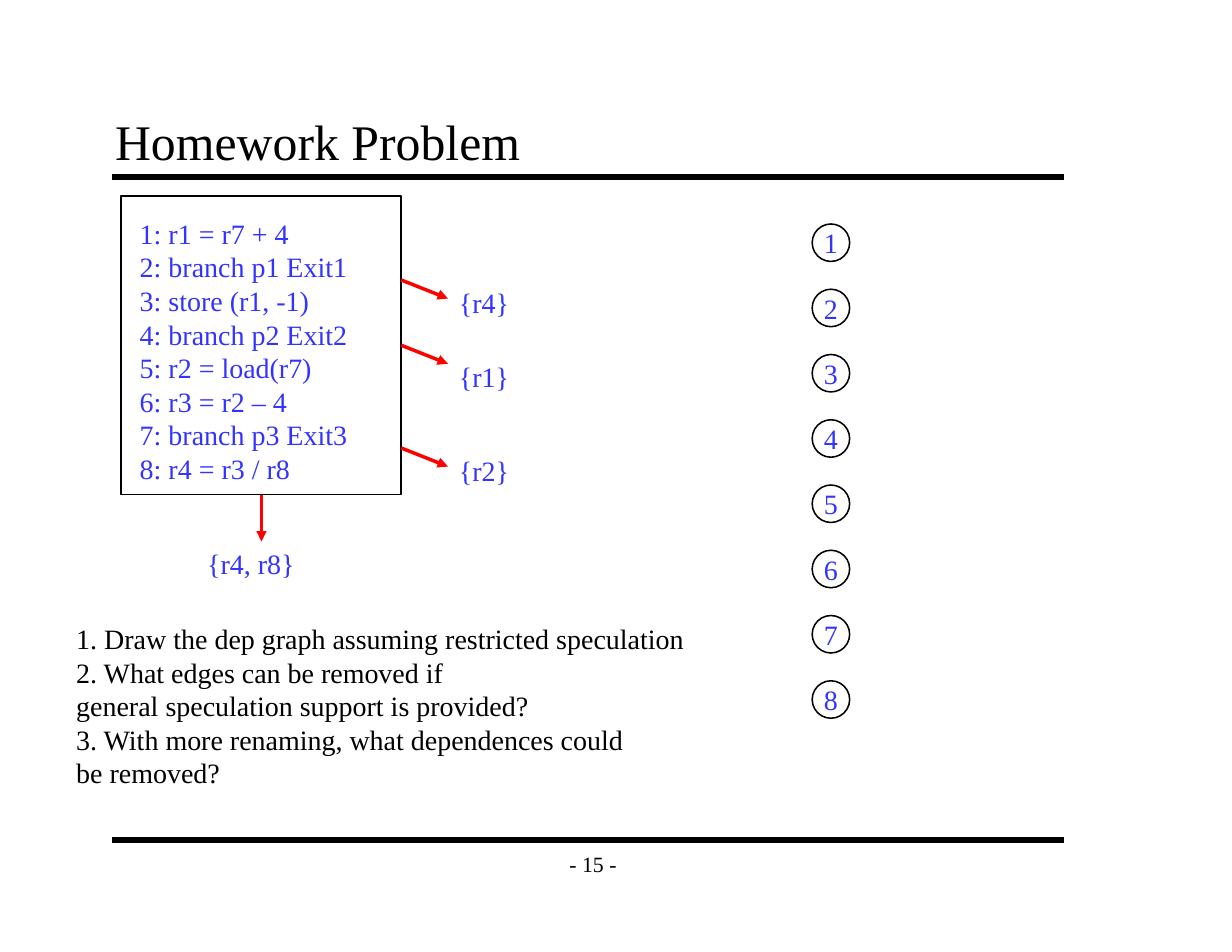
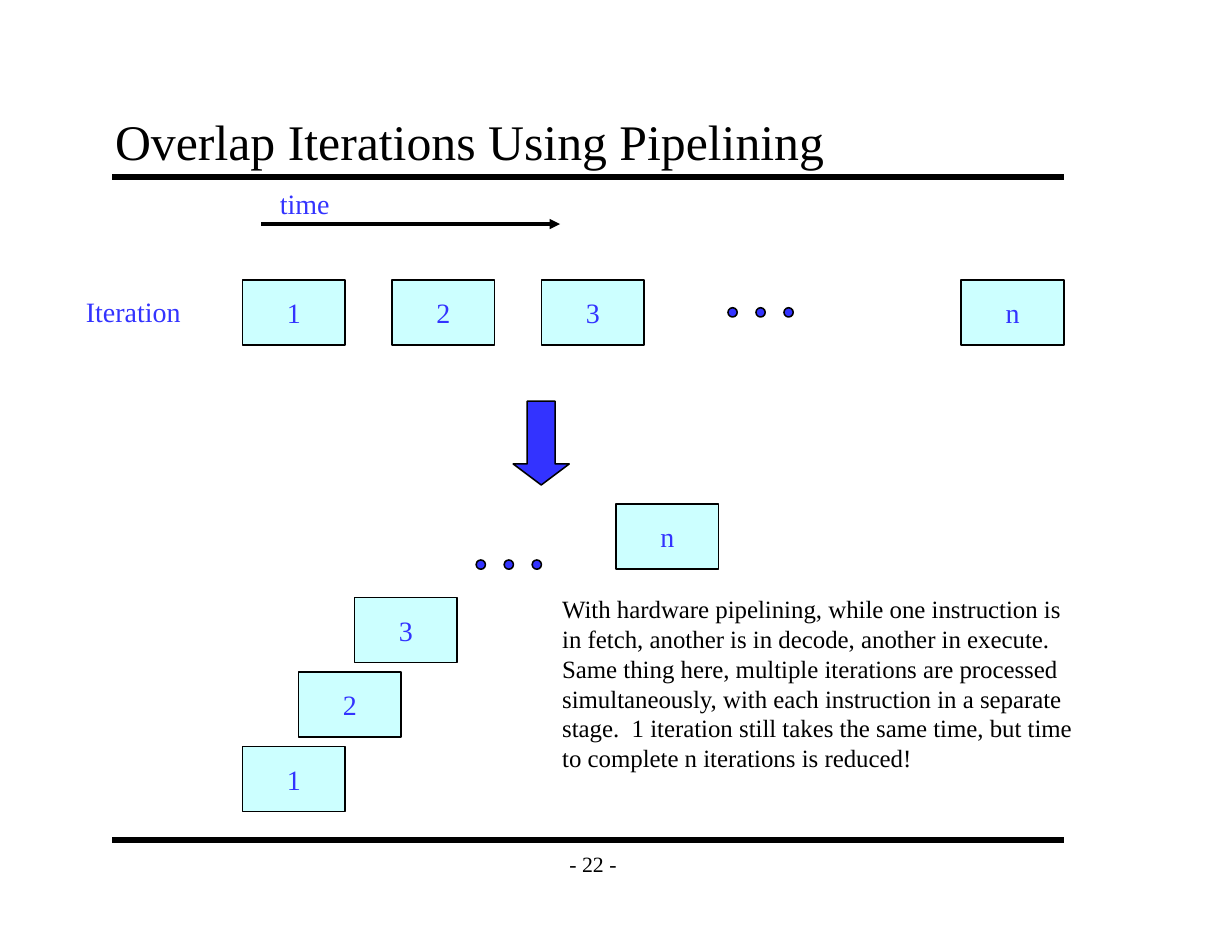
import pptx
import pptx.dml.color
import pptx.enum.shapes
import pptx.enum.text
import pptx.oxml
import pptx.oxml.ns
import pptx.util

Cm = pptx.util.Cm
Pt = pptx.util.Pt
RGBColor = pptx.dml.color.RGBColor
SHAPE = pptx.enum.shapes.MSO_SHAPE
ALIGN = pptx.enum.text.PP_ALIGN
ANCHOR = pptx.enum.text.MSO_ANCHOR

COLORS = {
    "ink": "000000",
    "blue": "3333FF",
    "box": "CCFFFF",
    "exit": "FF0000",
    "paper": "FFFFFF",
}
LABEL = {"size": Pt(18), "name": "Times New Roman"}
TITLE = {**LABEL, "size": Pt(32)}
FOOTER = {**LABEL, "size": Pt(14)}
NOTE = {**LABEL, "size": Pt(16)}

UNWRAPPED = {"word_wrap": False, "vertical_anchor": ANCHOR.TOP}
WRAPPED = {"word_wrap": True, "vertical_anchor": ANCHOR.TOP}
CENTERED = {"word_wrap": False, "vertical_anchor": ANCHOR.MIDDLE}
MARGINS = {
    "margin_left": Cm(0.28),
    "margin_right": Cm(0.28),
    "margin_top": Cm(0.15),
    "margin_bottom": Cm(0.15),
}
TITLE_FRAME = {"word_wrap": True, "vertical_anchor": ANCHOR.BOTTOM, **MARGINS}
FOOTER_FRAME = {**CENTERED, **MARGINS}


def add_item(slide, kind, position, lines=(), fill=None, color="blue",
             font=LABEL, frame=UNWRAPPED, align=ALIGN.LEFT):
    box = [Cm(length) for length in position]
    if kind is None:
        shape = slide.shapes.add_textbox(*box)
    else:
        shape = slide.shapes.add_shape(kind, *box)
        shape.shadow.inherit = False
        shape.line.color.rgb = RGBColor.from_string(COLORS["ink"])
        shape.line.width = Pt(1)
        if fill:
            shape.fill.solid()
            shape.fill.fore_color.rgb = RGBColor.from_string(COLORS[fill])
        else:
            shape.fill.background()
    text_frame = shape.text_frame
    for name, value in frame.items():
        setattr(text_frame, name, value)
    for index, line in enumerate(lines):
        paragraph = text_frame.add_paragraph() if index else text_frame.paragraphs[0]
        paragraph.alignment = align
        run = paragraph.add_run()
        run.text = line
        for name, value in font.items():
            setattr(run.font, name, value)
        run.font.color.rgb = RGBColor.from_string(COLORS[color])
    return shape


def add_line(slide, start, end, color="ink", width=4, arrow=False):
    connector = slide.shapes.add_connector(
        pptx.enum.shapes.MSO_CONNECTOR.STRAIGHT,
        *[Cm(length) for length in (*start, *end)])
    connector.line.color.rgb = RGBColor.from_string(COLORS[color])
    connector.line.width = Pt(width)
    if arrow:
        outline = connector.line._get_or_add_ln()
        tail = pptx.oxml.parse_xml(
            f'<a:tailEnd {pptx.oxml.ns.nsdecls("a")} type="triangle"/>')
        outline.append(tail)
    effects = pptx.oxml.parse_xml(f'<a:effectLst {pptx.oxml.ns.nsdecls("a")}/>')
    connector._element.spPr.append(effects)


presentation = pptx.Presentation()
presentation.slide_width = Cm(27.94)
presentation.slide_height = Cm(21.59)

slides = []
for title, number in [("Homework Problem", 15),
                      ("Overlap Iterations Using Pipelining", 22)]:
    slide = presentation.slides.add_slide(presentation.slide_layouts[6])
    slide.background.fill.solid()
    slide.background.fill.fore_color.rgb = RGBColor.from_string(COLORS["paper"])
    for rule_top in (4.02, 19.05):
        add_line(slide, (2.54, rule_top), (24.13, rule_top))
    add_item(slide, None, (12.5, 19.05, 1.9, 1.06), [f"- {number} -"],
             color="ink", font=FOOTER, frame=FOOTER_FRAME, align=ALIGN.CENTER)
    add_item(slide, None, (2.33, 2.33, 21.59, 1.69), [title],
             color="ink", font=TITLE, frame=TITLE_FRAME)
    slides.append(slide)
homework, overlap = slides

code = [
    "1: r1 = r7 + 4",
    "2: branch p1 Exit1",
    "3: store (r1, -1)",
    "4: branch p2 Exit2",
    "5: r2 = load(r7)",
    "6: r3 = r2 – 4",
    "7: branch p3 Exit3",
    "8: r4 = r3 / r8",
]
add_item(homework, None, (2.92, 4.78, 5.23, 6.35), code)
add_item(homework, SHAPE.RECTANGLE, (2.75, 4.45, 6.35, 6.77))

for live_out, arrow_top, label_top in [("{r4}", 6.35, 6.35),
                                       ("{r1}", 7.83, 8.03),
                                       ("{r2}", 10.16, 10.16)]:
    add_line(homework, (9.1, arrow_top), (10.16, arrow_top + 0.42),
             color="exit", width=2.25, arrow=True)
    add_item(homework, None, (10.16, label_top, 1.65, 1.02), [live_out])
add_line(homework, (5.93, 11.22), (5.93, 12.28), color="exit", width=2.25, arrow=True)
add_item(homework, None, (4.45, 12.28, 2.49, 1.02), ["{r4, r8}"])

questions = [
    "1. Draw the dep graph assuming restricted speculation",
    "2. What edges can be removed if",
    "general speculation support is provided?",
    "3. With more renaming, what dependences could",
    "be removed?",
]
add_item(homework, None, (1.48, 13.97, 14.45, 4.11), questions, color="ink")

for index in range(len(code)):
    add_item(homework, SHAPE.OVAL, (18.42, 5.08 + 1.48 * index, 0.85, 0.85),
             [str(index + 1)], frame=CENTERED, align=ALIGN.CENTER)

sequential = [("1", 5.5, 6.35), ("2", 8.89, 6.35), ("3", 12.28, 6.35), ("n", 21.8, 6.35)]
pipelined = [("1", 5.5, 16.93), ("2", 6.77, 15.24), ("3", 8.04, 13.55), ("n", 13.97, 11.43)]
for name, left, top in sequential + pipelined:
    add_item(overlap, SHAPE.RECTANGLE, (left, top, 2.33, 1.48), [name],
             fill="box", frame=CENTERED, align=ALIGN.CENTER)

for dots_left, dots_top in [(16.51, 6.98), (10.8, 12.7)]:
    for index in range(3):
        add_item(overlap, SHAPE.OVAL,
                 (dots_left + 0.635 * index, dots_top, 0.21, 0.21), fill="blue")

add_item(overlap, None, (1.7, 6.56, 2.67, 1.02), ["Iteration"])
add_line(overlap, (5.93, 5.08), (12.7, 5.08), width=2.25, arrow=True)
add_item(overlap, None, (6.1, 4.11, 1.65, 1.02), ["time"])

down_arrow = add_item(overlap, SHAPE.DOWN_ARROW, (11.64, 9.1, 1.27, 1.9), fill="blue")
down_arrow.adjustments[0] = 0.5
down_arrow.adjustments[1] = 0.375

explanation = (
    "With hardware pipelining, while one instruction is in fetch, another is in "
    "decode, another in execute.  Same thing here, multiple iterations are processed "
    "simultaneously, with each instruction in a separate stage.  1 iteration still "
    "takes the same time, but time to complete n iterations is reduced!"
)
add_item(overlap, None, (12.5, 13.34, 12.27, 4.32), [explanation],
         color="ink", font=NOTE, frame=WRAPPED)

presentation.save("out.pptx")
